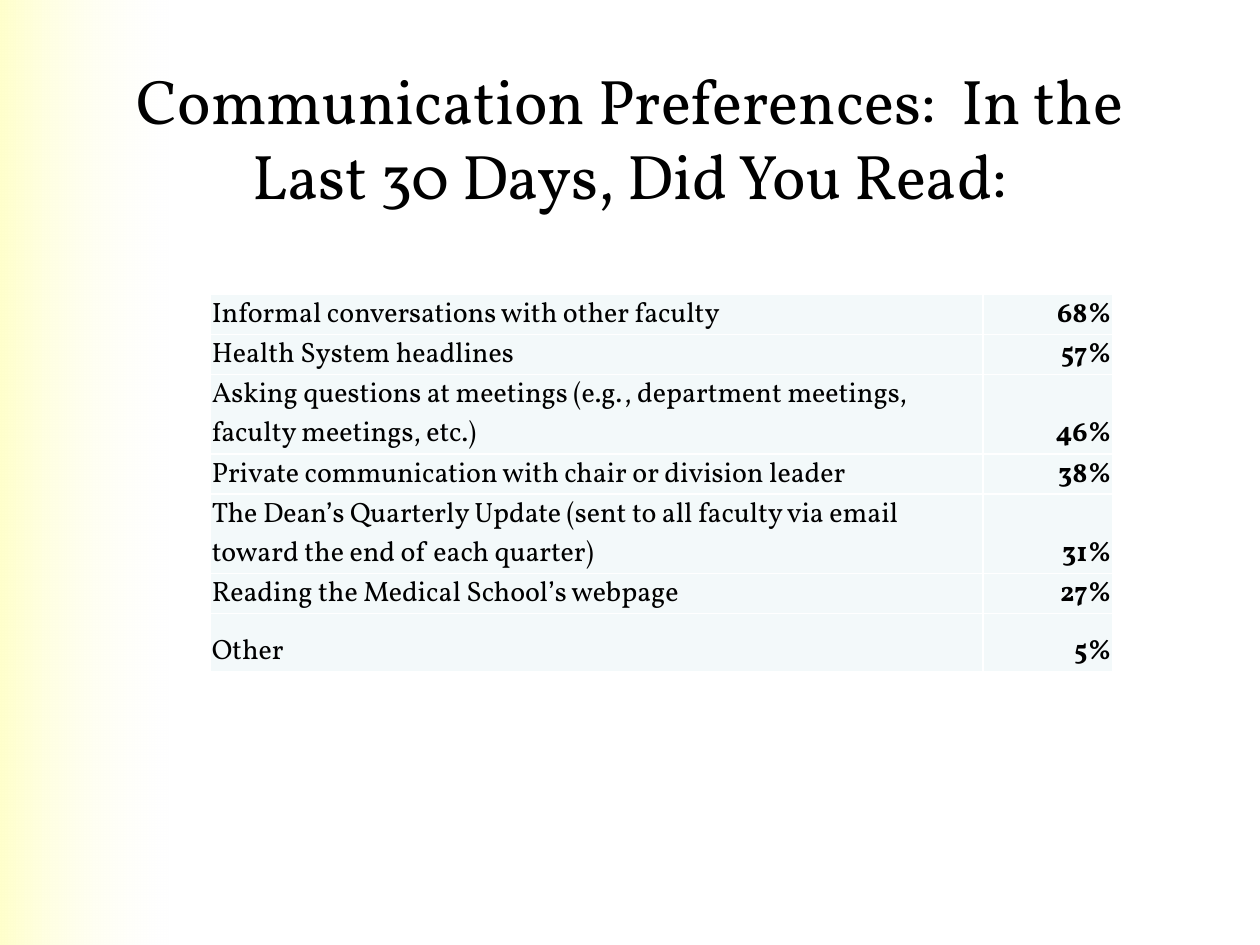
from dataclasses import dataclass

from pptx import Presentation
from pptx.dml.color import RGBColor as Rgb
from pptx.enum.shapes import MSO_SHAPE as Shape
from pptx.enum.text import MSO_ANCHOR as Anchor, PP_ALIGN as Align
from pptx.oxml import parse_xml
from pptx.oxml.ns import nsdecls
from pptx.oxml.xmlchemy import OxmlElement
from pptx.util import Cm, Pt


@dataclass(frozen=True)
class Theme:
    font: str = "Vollkorn"
    text: str = "000000"
    cell: str = "F3F9FA"
    border: str = "FFFFFF"
    band_start: str = "FFFFCC"
    band_end: str = "FFFFF4"
    title_size: int = 36
    title_leading: int = 43
    table_size: int = 16
    border_width: int = 1


THEME = Theme()
TITLE = "Communication Preferences:  In the Last 30 Days, Did You Read:"
COLUMN_WIDTHS = (15.58, 2.62)
ONE_LINE, TWO_LINES, LAST_LINE = 0.81, 1.6, 1.17
SOURCES = (
    ("Informal conversations with other faculty", "68%", ONE_LINE),
    ("Health System headlines", "57%", ONE_LINE),
    ("Asking questions at meetings (e.g., department meetings, "
     "faculty meetings, etc.)", "46%", TWO_LINES),
    ("Private communication with chair or division leader", "38%", ONE_LINE),
    ("The Dean’s Quarterly Update (sent to all faculty via email "
     "toward the end of each quarter)", "31%", TWO_LINES),
    ("Reading the Medical School’s webpage", "27%", ONE_LINE),
    ("Other", "5%", LAST_LINE),
)


def add_span(para, text, size, bold=False):
    span = para.add_run()
    span.text = text
    span.font.name = THEME.font
    span.font.size = Pt(size)
    span.font.bold = bold
    span.font.color.rgb = Rgb.from_string(THEME.text)


def add_side_band(page, height):
    """Add the left band, which fades to fully transparent."""
    band = page.shapes.add_shape(Shape.RECTANGLE, 0, 0, Cm(3.39), height)
    band.shadow.inherit = False
    band.line.fill.background()
    band.fill.gradient()
    band.fill.gradient_angle = 0
    stops = band.fill.gradient_stops
    for stop, position, color in zip(stops, (0, 1), (THEME.band_start, THEME.band_end)):
        stop.position = position
        stop.color.rgb = Rgb.from_string(color)
    alpha = OxmlElement("a:alpha")
    alpha.set("val", "0")
    band.fill._xPr.xpath(".//a:gs/a:srgbClr")[-1].append(alpha)


def add_title(page):
    box = page.shapes.add_textbox(Cm(1.27), Cm(0.84), Cm(22.86), Cm(3.18))
    frame = box.text_frame
    frame.word_wrap = True
    frame.vertical_anchor = Anchor.TOP
    frame.margin_top = Cm(0.41)
    para = frame.paragraphs[0]
    para.alignment = Align.CENTER
    para.line_spacing = Pt(THEME.title_leading)
    add_span(para, TITLE, THEME.title_size)


def add_borders(cell):
    properties = cell._tc.get_or_add_tcPr()
    for index, side in enumerate(("lnL", "lnR", "lnT", "lnB")):
        properties.insert(index, parse_xml(
            f'<a:{side} {nsdecls("a")} w="{Pt(THEME.border_width)}"><a:solidFill>'
            f'<a:srgbClr val="{THEME.border}"/></a:solidFill></a:{side}>'))


def fill_cell(cell, text, alignment, bold):
    cell.fill.solid()
    cell.fill.fore_color.rgb = Rgb.from_string(THEME.cell)
    cell.vertical_anchor = Anchor.BOTTOM
    cell.margin_left = cell.margin_right = cell.margin_top = Cm(0.03)
    cell.margin_bottom = 0
    add_borders(cell)
    para = cell.text_frame.paragraphs[0]
    para.alignment = alignment
    add_span(para, text, THEME.table_size, bold)


def add_source_table(page):
    height = sum(row_height for _, _, row_height in SOURCES)
    table = page.shapes.add_table(
        len(SOURCES), len(COLUMN_WIDTHS), Cm(4.24), Cm(5.93),
        Cm(sum(COLUMN_WIDTHS)), Cm(height)).table
    table.first_row = False
    table.horz_banding = False
    for column, width in zip(table.columns, COLUMN_WIDTHS):
        column.width = Cm(width)
    for row, (source, share, row_height) in zip(table.rows, SOURCES):
        row.height = Cm(row_height)
        fill_cell(row.cells[0], source, Align.LEFT, bold=False)
        fill_cell(row.cells[1], share, Align.RIGHT, bold=True)


def main():
    deck = Presentation()
    deck.slide_width, deck.slide_height = Cm(25.4), Cm(19.05)
    page = deck.slides.add_slide(deck.slide_layouts[6])
    add_side_band(page, deck.slide_height)
    add_title(page)
    add_source_table(page)
    deck.save("out.pptx")


if __name__ == "__main__":
    main()
